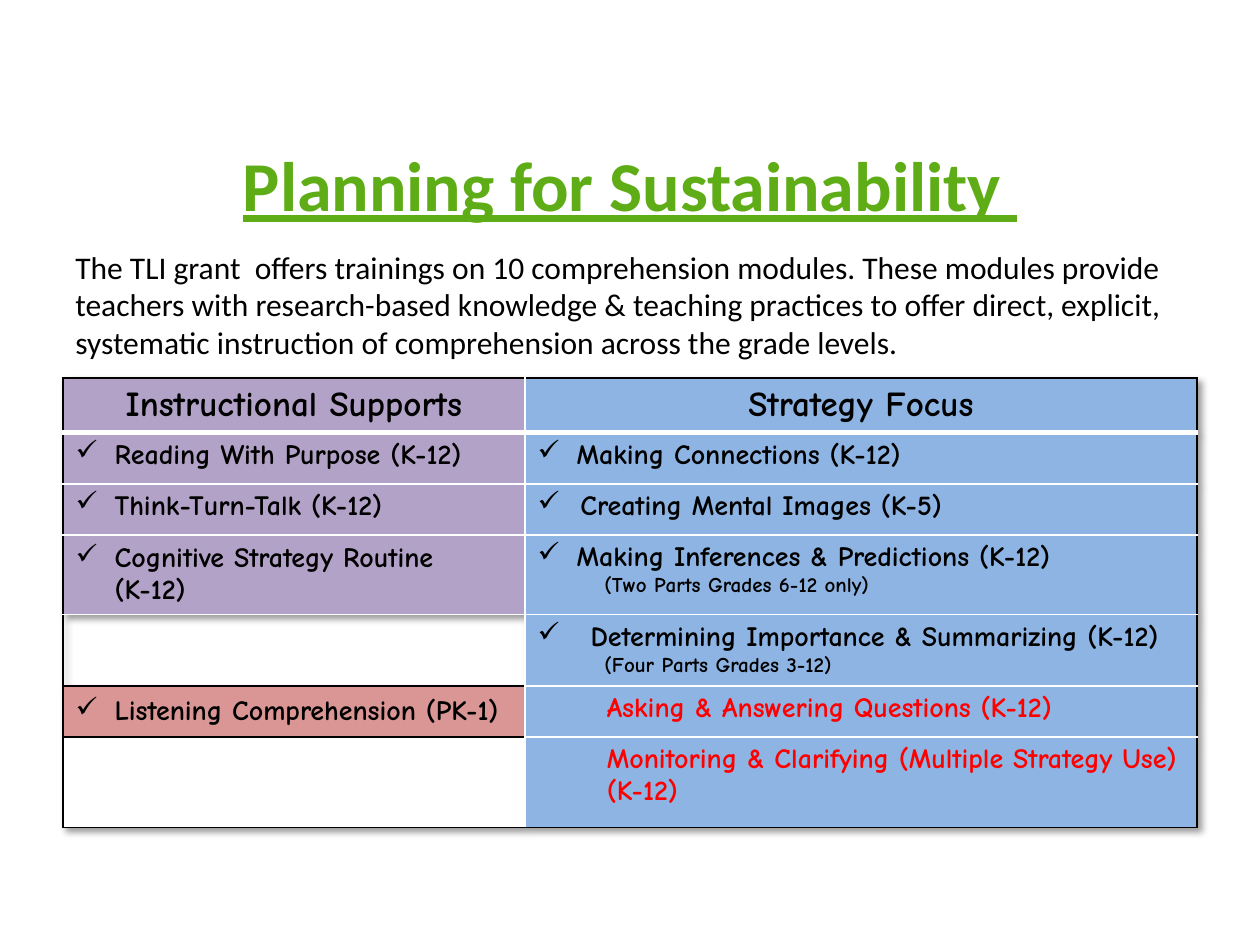
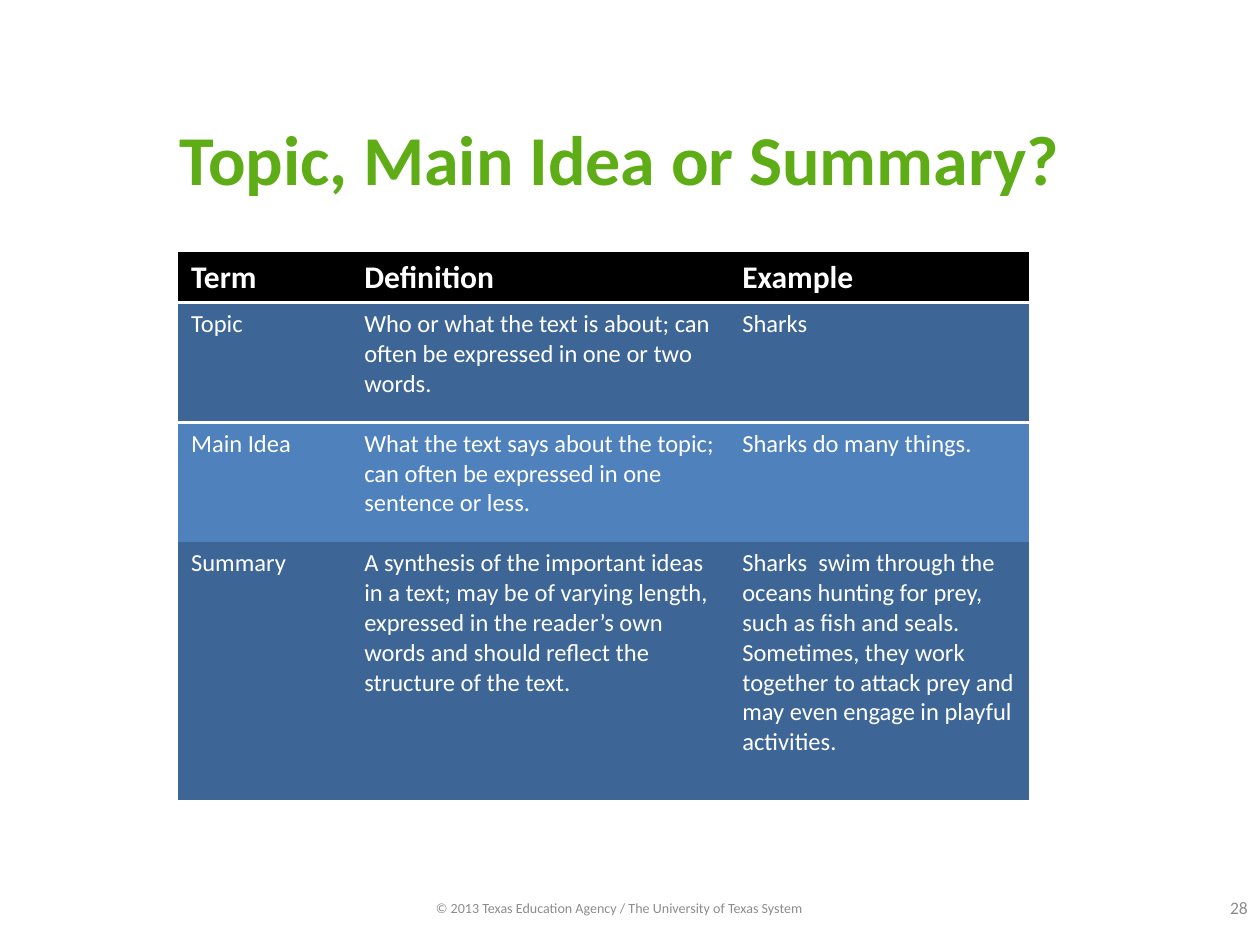
from dataclasses import dataclass
from typing import NamedTuple, Optional

from lxml import etree
from pptx import Presentation
from pptx.dml.color import RGBColor
from pptx.enum import text
from pptx.oxml import ns
from pptx.util import Emu, Inches, Pt

GRID_COLS, GRID_ROWS = 120, 90
WIDTH, HEIGHT = Inches(10), Inches(7.5)
NO_STYLE = "{2D5ABB26-0587-4C30-8999-92F81FD0307C}"
CENTER = text.PP_ALIGN.CENTER
TOP, MIDDLE = text.MSO_ANCHOR.TOP, text.MSO_ANCHOR.MIDDLE


@dataclass(frozen=True)
class Theme:
    font: str = "Calibri"
    playful: str = "Comic Neue"
    green: str = "5EAD16"
    black: str = "000000"
    white: str = "FFFFFF"
    grey: str = "8C8C8C"
    red: str = "FF0000"
    purple: str = "B3A2C7"
    sky: str = "8EB4E3"
    rose: str = "D99694"
    navy: str = "3D6696"
    blue: str = "4F81BD"
    title: int = 40
    heading: int = 20
    lead: int = 18
    item: int = 16
    cell: int = 14
    note: int = 12
    number: int = 10
    footer: int = 8


T = Theme()


class Box(NamedTuple):
    col: float
    row: float
    cols: float
    rows: float


class Line(NamedTuple):
    text: str
    size: int = T.item
    color: str = T.black
    indent: float = 0
    check: bool = False


class Cell(NamedTuple):
    lines: tuple = ()
    fill: Optional[str] = None
    anchor: text.MSO_ANCHOR = TOP


def across(n: float) -> Emu:
    return Emu(round(WIDTH * n / GRID_COLS))


def down(n: float) -> Emu:
    return Emu(round(HEIGHT * n / GRID_ROWS))


def place(box: Box) -> tuple:
    return across(box.col), down(box.row), across(box.cols), down(box.rows)


def write(p, words: str, *, size: int, color: str, font: str = T.font, bold: bool = False,
          underline: bool = False, align=None, indent: float = 0, check: bool = False) -> None:
    pPr = p._p.get_or_add_pPr()
    pPr.set("marL", str(Inches(indent)))
    pPr.set("indent", str(-Inches(indent) if check else 0))
    if check:
        etree.SubElement(pPr, ns.qn("a:buChar"), char="✓")
    if align is not None:
        p.alignment = align
    r = p.add_run()
    r.text = words
    f = r.font
    f.name, f.size, f.bold, f.underline = font, Pt(size), bold, underline
    f.color.rgb = RGBColor.from_string(color)


def add_text(s, box: Box, words: str, anchor=MIDDLE, **style) -> None:
    tf = s.shapes.add_textbox(*place(box)).text_frame
    tf.word_wrap = True
    tf.vertical_anchor = anchor
    write(tf.paragraphs[0], words, **style)


def add_title(s, box: Box, words: str, underline: bool = False) -> None:
    add_text(s, box, words, size=T.title, color=T.green, bold=True,
             underline=underline, align=CENTER)


def add_grid(s, box: Box, cols: tuple, rows: tuple):
    tbl = s.shapes.add_table(len(rows), len(cols), *place(box)).table
    tbl.first_row = tbl.horz_banding = False
    tbl._tbl.tblPr.find(ns.qn("a:tableStyleId")).text = NO_STYLE
    for column, n in zip(tbl.columns, cols):
        column.width = across(n)
    for row, n in zip(tbl.rows, rows):
        row.height = down(n)
    return tbl


def add_borders(cell, **edges: tuple) -> None:
    tcPr = cell._tc.get_or_add_tcPr()
    for side in "LRTB":
        if side in edges:
            color, width = edges[side]
            ln = etree.SubElement(tcPr, ns.qn(f"a:ln{side}"), w=str(Pt(width)))
            fill = etree.SubElement(ln, ns.qn("a:solidFill"))
            etree.SubElement(fill, ns.qn("a:srgbClr"), val=color)


def paint(cell, color: Optional[str]) -> None:
    if color:
        cell.fill.solid()
        cell.fill.fore_color.rgb = RGBColor.from_string(color)


def add_table_shadow(tbl) -> None:
    effects = etree.Element(ns.qn("a:effectLst"))
    shadow = etree.SubElement(effects, ns.qn("a:outerShdw"), blurRad="50800", dist="38100",
                              dir="2700000", algn="tl", rotWithShape="0")
    color = etree.SubElement(shadow, ns.qn("a:srgbClr"), val=T.black)
    etree.SubElement(color, ns.qn("a:alpha"), val="40000")
    tbl._tbl.tblPr.insert(0, effects)


def check(words: str, indent: float = 0.31) -> Line:
    return Line(words, indent=indent, check=True)


def note(words: str) -> Line:
    return Line(words, T.note, indent=0.53)


def pending(words: str) -> Line:
    return Line(words, color=T.red, indent=0.55)


def support(words: str, fill: str = T.purple, anchor=TOP) -> Cell:
    return Cell((check(words),), fill, anchor)


def strategy(*lines: Line) -> Cell:
    return Cell(lines, T.sky)


MODULES = (
    (Cell((Line("Instructional Supports", T.heading),), T.purple, MIDDLE),
     Cell((Line("Strategy Focus", T.heading),), T.sky, MIDDLE)),
    (support("Reading With Purpose (K-12)"), strategy(check("Making Connections (K-12)"))),
    (support("Think-Turn-Talk (K-12)"), strategy(check("Creating Mental Images (K-5)", 0.34))),
    (support("Cognitive Strategy Routine (K-12)", anchor=MIDDLE),
     strategy(check("Making Inferences & Predictions (K-12)"),
              note("(Two Parts Grades 6-12 only)"))),
    (Cell(), strategy(check("Determining Importance & Summarizing (K-12)", 0.42),
                      note("(Four Parts Grades 3-12)"))),
    (support("Listening Comprehension (PK-1)", T.rose, MIDDLE),
     strategy(pending("Asking & Answering Questions (K-12)"))),
    (Cell(fill=T.white),
     strategy(pending("Monitoring & Clarifying (Multiple Strategy Use)"), pending("(K-12)"))),
)

TERMS = (
    ("Term", "Definition", "Example"),
    ("Topic",
     "Who or what the text is about; can often be expressed in one or two words.",
     "Sharks"),
    ("Main Idea",
     "What the text says about the topic; can often be expressed in one sentence or less.",
     "Sharks do many things."),
    ("Summary",
     "A synthesis of the important ideas in a text; may be of varying length, expressed in "
     "the reader’s own words and should reflect the structure of the text.",
     "Sharks  swim through the oceans hunting for prey, such as fish and seals. Sometimes, "
     "they work together to attack prey and may even engage in playful activities."),
)


def module_borders(i: int, j: int) -> dict:
    black, white = (T.black, 1), (T.white, 1)
    listening = len(MODULES) - 2
    edges = dict(L=white if j else black, R=black if j else white, T=white, B=white)
    if i == 0:
        edges.update(T=black, B=(T.white, 3))
    if i == 1:
        edges.update(T=(T.white, 3))
    if i == len(MODULES) - 1:
        edges.update(B=black)
    if j == 0 and i >= listening - 1:
        edges.update(B=black)
        if i >= listening:
            edges.update(T=black)
        if i == listening:
            edges.update(R=black)
    return edges


def build_sustainability(s) -> None:
    add_title(s, Box(6, 12.5, 108, 10), "Planning for Sustainability ", underline=True)
    add_text(s, Box(3, 23, 115, 12),
             "The TLI grant  offers trainings on 10 comprehension modules. These modules provide "
             "teachers with research-based knowledge & teaching practices to offer direct, "
             "explicit, systematic instruction of comprehension across the grade levels.",
             anchor=TOP, size=T.lead, color=T.black, indent=0.25)
    tbl = add_grid(s, Box(6, 36, 108, 42.1), (44, 64), (5, 4.87, 4.87, 7.3, 6.6, 4.87, 8.6))
    add_table_shadow(tbl)
    for i, row in enumerate(MODULES):
        for j, item in enumerate(row):
            cell = tbl.cell(i, j)
            add_borders(cell, **module_borders(i, j))
            paint(cell, item.fill)
            cell.vertical_anchor = item.anchor
            tf = cell.text_frame
            for k, line in enumerate(item.lines):
                p = tf.add_paragraph() if k else tf.paragraphs[0]
                write(p, line.text, size=line.size, color=line.color, font=T.playful, bold=True,
                      indent=line.indent, check=line.check, align=None if i else CENTER)


def build_terms(s) -> None:
    add_title(s, Box(5, 10, 108, 10), "Topic, Main Idea or Summary?")
    add_text(s, Box(115, 84.8, 6, 3.2), "28", size=T.number, color=T.grey, align=CENTER)
    add_text(s, Box(25, 85, 68, 3),
             "© 2013 Texas Education Agency / The University of Texas System",
             size=T.footer, color=T.grey, align=CENTER)
    tbl = add_grid(s, Box(17, 24, 81, 52.2), (16.5, 36, 28.5), (4.85, 11.4, 11.4, 24.55))
    rule = (T.white, 2)
    for i, row in enumerate(TERMS):
        for j, words in enumerate(row):
            cell = tbl.cell(i, j)
            add_borders(cell, **({"B": rule} if i == 0 else {"T": rule} if i == 1 else {}))
            paint(cell, T.black if i == 0 else T.navy if i % 2 else T.blue)
            write(cell.text_frame.paragraphs[0], words, size=T.cell if i else T.lead,
                  color=T.white, bold=i == 0)


def main() -> None:
    prs = Presentation()
    prs.slide_width, prs.slide_height = WIDTH, HEIGHT
    for build in (build_sustainability, build_terms):
        build(prs.slides.add_slide(prs.slide_layouts[6]))
    prs.save("out.pptx")


if __name__ == "__main__":
    main()
